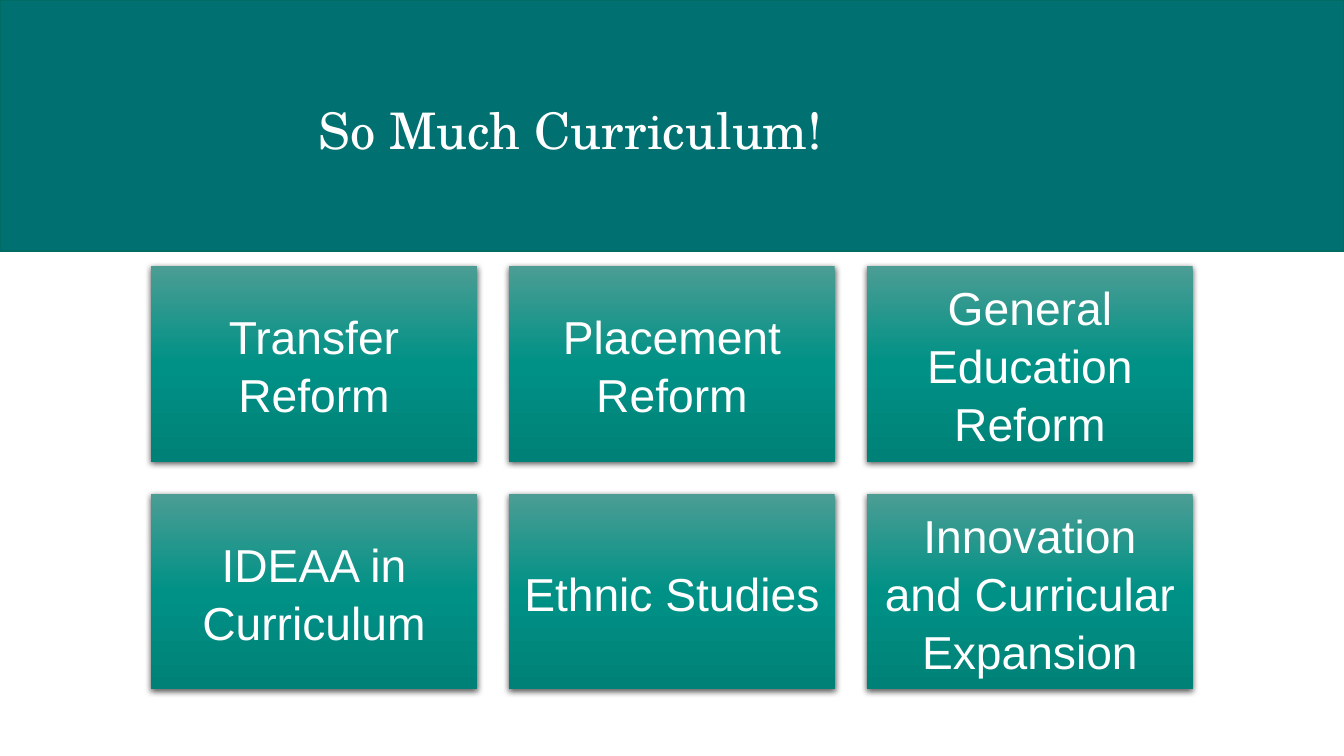
from copy import deepcopy
from dataclasses import dataclass

from lxml.etree import SubElement
from pptx import Presentation
from pptx.dml.color import RGBColor as RGB
from pptx.enum.shapes import MSO_SHAPE as SHAPE
from pptx.enum.text import MSO_ANCHOR as ANCHOR, PP_ALIGN as ALIGN
from pptx.oxml.ns import qn
from pptx.util import Inches, Pt

COLORS = {
    "band": "007071",
    "band_line": "006B63",
    "card_top": "4B9D94",
    "card_middle": "009186",
    "card_bottom": "008177",
    "shadow": "000000",
    "text": "FFFFFF",
}
SLIDE_W, SLIDE_H = 13.33, 7.5


@dataclass
class Grid:
    left: float = 1.5
    top: float = 2.64
    width: float = 3.23
    height: float = 1.94
    gap: float = 0.32

    def cell(self, col: int, row: int) -> tuple:
        x = self.left + col * (self.width + self.gap)
        y = self.top + row * (self.height + self.gap)
        return tuple(Inches(v) for v in (x, y, self.width, self.height))


@dataclass
class Card:
    text: str
    col: int
    row: int


CARDS = [
    Card("Transfer Reform", 0, 0),
    Card("Placement Reform", 1, 0),
    Card("General Education Reform", 2, 0),
    Card("IDEAA in Curriculum", 0, 1),
    Card("Ethnic Studies", 1, 1),
    Card("Innovation and Curricular Expansion", 2, 1),
]


def color(name: str) -> RGB:
    return RGB.from_string(COLORS[name])


def write(sp, text: str, font: str, size: int, align, spacing: float) -> None:
    tf = sp.text_frame
    tf.word_wrap = True
    tf.vertical_anchor = ANCHOR.MIDDLE
    tf.text = text
    p = tf.paragraphs[0]
    p.alignment = align
    p.line_spacing = spacing
    r = p.runs[0]
    r.font.name = font
    r.font.size = Pt(size)
    r.font.color.rgb = color("text")


def fill_gradient(sp) -> None:
    sp.fill.gradient()
    sp.fill.gradient_angle = 270
    stops = sp._element.spPr.find(".//" + qn("a:gsLst"))
    stops.insert(1, deepcopy(stops[0]))
    names = ("card_top", "card_middle", "card_bottom")
    for i, (stop, name) in enumerate(zip(sp.fill.gradient_stops, names)):
        stop.position = i / 2
        stop.color.rgb = color(name)


def add_shadow(sp) -> None:
    sp.shadow.inherit = False
    effects = sp._element.spPr.find(qn("a:effectLst"))
    outer = SubElement(effects, qn("a:outerShdw"), blurRad=str(Pt(4.5)),
                       dist=str(Pt(1.5)), dir="5400000", rotWithShape="0")
    tone = SubElement(outer, qn("a:srgbClr"), val=COLORS["shadow"])
    SubElement(tone, qn("a:alpha"), val="63000")


def add_band(slide) -> None:
    sp = slide.shapes.add_shape(
        SHAPE.RECTANGLE, 0, 0, Inches(SLIDE_W), Inches(SLIDE_H * 0.332))
    sp.shadow.inherit = False
    sp.fill.solid()
    sp.fill.fore_color.rgb = color("band")
    sp.line.color.rgb = color("band_line")
    sp.line.width = Pt(1)


def add_title(slide) -> None:
    box = slide.shapes.add_textbox(
        Inches(3.06), Inches(0.4), Inches(9.36), Inches(1.84))
    write(box, "So Much Curriculum!", "TeX Gyre Schola", 36, ALIGN.LEFT, 0.9)


def add_card(slide, grid: Grid, card: Card) -> None:
    sp = slide.shapes.add_shape(SHAPE.RECTANGLE, *grid.cell(card.col, card.row))
    fill_gradient(sp)
    sp.line.fill.background()
    add_shadow(sp)
    tf = sp.text_frame
    tf.margin_left = tf.margin_right = Inches(0.14)
    tf.margin_top = tf.margin_bottom = Inches(0.14)
    write(sp, card.text, "Arial", 33, ALIGN.CENTER, 1.05)


def main() -> None:
    prs = Presentation()
    prs.slide_width, prs.slide_height = Inches(SLIDE_W), Inches(SLIDE_H)
    slide = prs.slides.add_slide(prs.slide_layouts[6])
    add_band(slide)
    add_title(slide)
    grid = Grid()
    for card in CARDS:
        add_card(slide, grid, card)
    prs.save("out.pptx")


if __name__ == "__main__":
    main()
